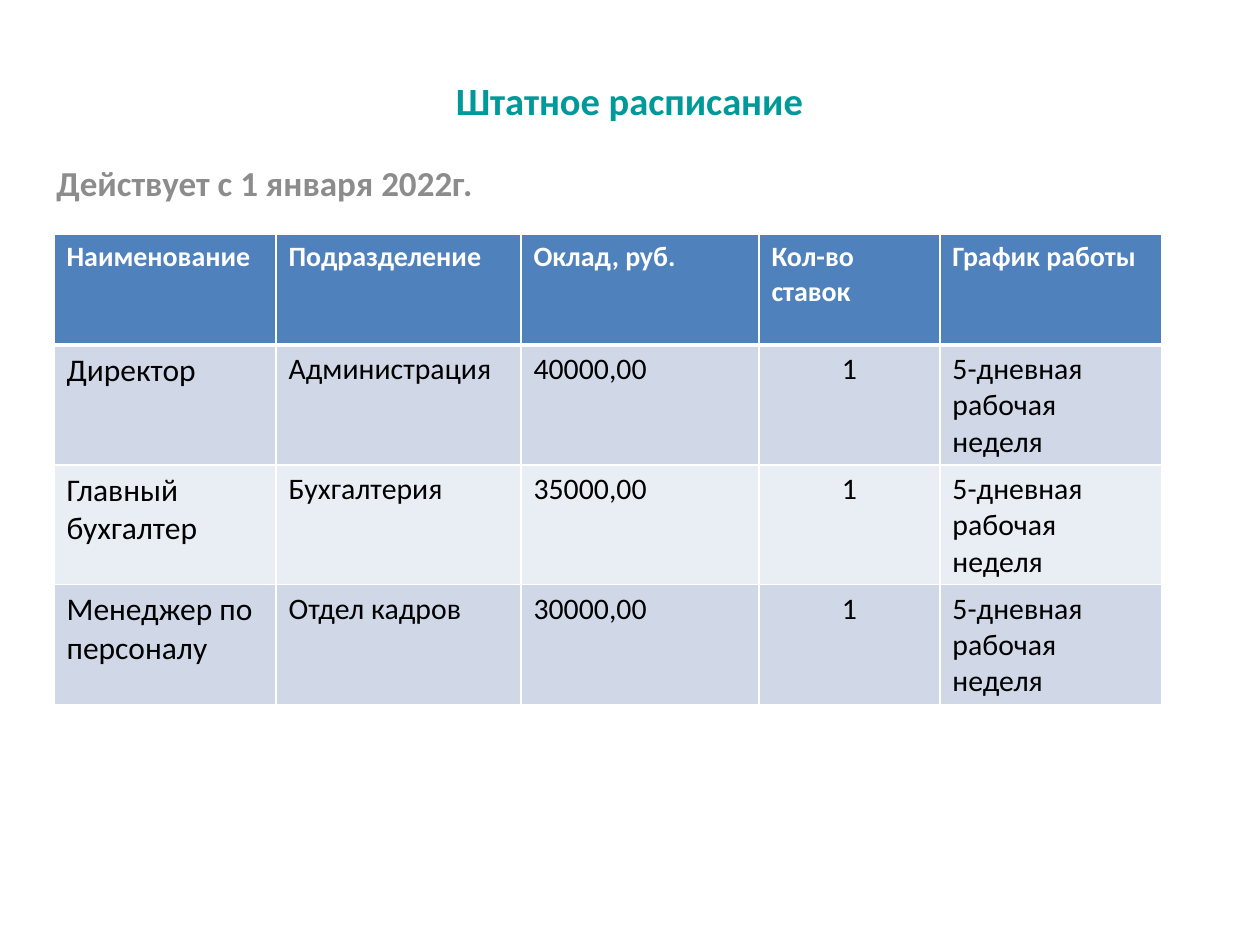
from lxml.etree import SubElement
from pptx import Presentation
from pptx.dml.color import RGBColor
from pptx.enum.text import MSO_ANCHOR, PP_ALIGN
from pptx.oxml.ns import qn
from pptx.util import Inches, Pt

PX = Inches(1) / 126


def style(frame, size, color, bold=False, align=PP_ALIGN.LEFT):
    for para in frame.paragraphs:
        para.alignment = align
        for run in para.runs:
            run.font.name = "Calibri"
            run.font.size = Pt(size)
            run.font.bold = bold
            run.font.color.rgb = RGBColor.from_string(color)


def edge(cell, side, width):
    """Draw a white border on one side: L, R, T or B."""
    line = SubElement(cell._tc.get_or_add_tcPr(), qn("a:ln" + side), w=str(Pt(width)))
    fill = SubElement(line, qn("a:solidFill"))
    SubElement(fill, qn("a:srgbClr"), val="FFFFFF")


prs = Presentation()
prs.slide_width, prs.slide_height = Inches(10), Inches(7.5)
slide = prs.slides.add_slide(prs.slide_layouts[6])

texts = [
    ("Штатное расписание", (94, 45, 1071, 110), 22, "009999",
     PP_ALIGN.CENTER, MSO_ANCHOR.MIDDLE),
    ("Действует с 1 января 2022г.", (44, 155, 1150, 753), 20, "8C8C8C",
     PP_ALIGN.JUSTIFY, MSO_ANCHOR.TOP),
]
for text, place, size, color, align, anchor in texts:
    box = slide.shapes.add_textbox(*(round(n * PX) for n in place))
    frame = box.text_frame
    frame.word_wrap = True
    frame.vertical_anchor = anchor
    frame.text = text
    style(frame, size, color, True, align)

week = "5-дневная\nрабочая неделя"
rows = [
    ["Наименование", "Подразделение", "Оклад, руб.", "Кол-во ставок", "График работы"],
    ["Директор", "Администрация", "40000,00", "1", week],
    ["Главный\nбухгалтер", "Бухгалтерия", "35000,00", "1", week],
    ["Менеджер по\nперсоналу", "Отдел кадров", "30000,00", "1", week],
]
widths = [222, 245, 238, 181, 222]
height = 111
place = (54, 234, sum(widths), height * len(rows))
table = slide.shapes.add_table(
    len(rows), len(widths), *(round(n * PX) for n in place)).table
for col, width in zip(table.columns, widths):
    col.width = round(width * PX)

for r, row in enumerate(rows):
    table.rows[r].height = round(height * PX)
    for c, text in enumerate(row):
        cell = table.cell(r, c)
        for side in "LRTB":
            thick = (r, side) in [(0, "B"), (1, "T")]
            edge(cell, side, 3 if thick else 1)
        cell.fill.solid()
        back = "4F81BD" if r == 0 else "D0D8E8" if r % 2 else "E9EDF4"
        cell.fill.fore_color.rgb = RGBColor.from_string(back)
        cell.text_frame.text = text
        if r == 0:
            style(cell.text_frame, 16, "FFFFFF", True)
        else:
            align = PP_ALIGN.CENTER if c == 3 else PP_ALIGN.LEFT
            style(cell.text_frame, 17 if c else 18, "000000", align=align)

prs.save("out.pptx")
